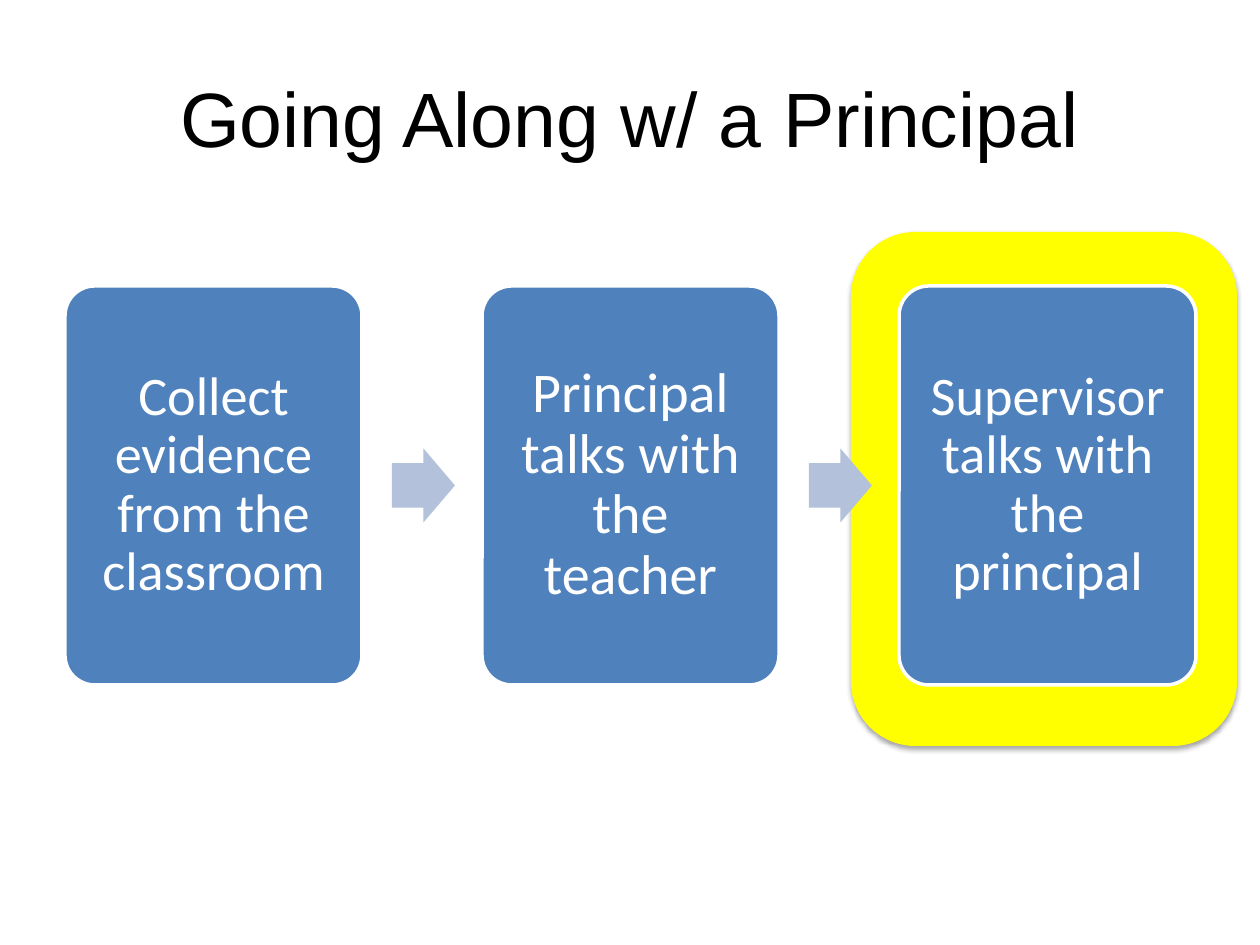
"""Build a slide showing a three-step process with its last step highlighted."""
from dataclasses import dataclass

from lxml.etree import SubElement
from pptx import Presentation
from pptx.dml.color import RGBColor
from pptx.enum.shapes import MSO_SHAPE
from pptx.enum.text import MSO_ANCHOR, PP_ALIGN
from pptx.oxml.ns import qn
from pptx.util import Pt

TITLE = "Going Along w/ a Principal"
STEPS = [
    ("Collect evidence from the classroom", 31),
    ("Principal talks with the teacher", 32),
    ("Supervisor talks with the principal", 31),
]

PX = 914400 / 126
SLIDE_SIZE = (1260, 945)
TITLE_BOX = (63, 38, 1134, 158)
HIGHLIGHT_BOX = (851, 232, 386, 514)
CARD_LEFT, CARD_TOP, CARD_WIDTH, CARD_HEIGHT = 65, 286, 297, 399
CARD_PITCH = 417
CARD_MARGIN = 16
ARROW_GAP, ARROW_WIDTH, ARROW_HEIGHT = 30, 63, 74


@dataclass(frozen=True)
class Theme:
    title_font: str = "Arial"
    card_font: str = "Calibri"
    title_size: int = 44
    title_color: str = "000000"
    card_text: str = "FFFFFF"
    card_fill: str = "4F81BD"
    card_line: str = "FFFFFF"
    arrow_fill: str = "B3C1DB"
    highlight_fill: str = "FFFF00"
    shadow_color: str = "000000"


THEME = Theme()


def emu(*lengths):
    return [round(length * PX) for length in lengths]


def add_block(page, preset, place, fill, adjustments=()):
    block = page.shapes.add_shape(preset, *emu(*place))
    block.shadow.inherit = False
    block.fill.solid()
    block.fill.fore_color.rgb = RGBColor.from_string(fill)
    block.line.fill.background()
    for index, value in enumerate(adjustments):
        block.adjustments[index] = value
    return block


def write(box, text, font, size, color, margins):
    frame = box.text_frame
    frame.word_wrap = True
    frame.vertical_anchor = MSO_ANCHOR.MIDDLE
    frame.margin_left = frame.margin_right = frame.margin_top = frame.margin_bottom = margins
    para = frame.paragraphs[0]
    para.text = text
    para.alignment = PP_ALIGN.CENTER
    para.font.name = font
    para.font.size = Pt(size)
    para.font.color.rgb = RGBColor.from_string(color)
    return para


def add_shadow(block):
    effects = block._element.spPr.find(qn("a:effectLst"))
    shadow = SubElement(effects, qn("a:outerShdw"), blurRad=str(Pt(3.1)), dist=str(Pt(1.8)),
                        dir="5400000", rotWithShape="0")
    color = SubElement(shadow, qn("a:srgbClr"), val=THEME.shadow_color)
    SubElement(color, qn("a:alpha"), val="35000")


def add_card(page, left, text, size):
    place = (left, CARD_TOP, CARD_WIDTH, CARD_HEIGHT)
    card = add_block(page, MSO_SHAPE.ROUNDED_RECTANGLE, place, THEME.card_fill, [0.1])
    card.line.color.rgb = RGBColor.from_string(THEME.card_line)
    card.line.width = Pt(2)
    para = write(card, text, THEME.card_font, size, THEME.card_text, emu(CARD_MARGIN)[0])
    para.line_spacing = 0.9


def add_arrow(page, card_left):
    left = card_left + CARD_WIDTH + ARROW_GAP
    top = CARD_TOP + (CARD_HEIGHT - ARROW_HEIGHT) / 2
    place = (left, top, ARROW_WIDTH, ARROW_HEIGHT)
    add_block(page, MSO_SHAPE.RIGHT_ARROW, place, THEME.arrow_fill, [0.6, 0.5])


def main():
    deck = Presentation()
    deck.slide_width, deck.slide_height = emu(*SLIDE_SIZE)
    page = deck.slides.add_slide(deck.slide_layouts[6])

    highlight = add_block(page, MSO_SHAPE.ROUNDED_RECTANGLE, HIGHLIGHT_BOX, THEME.highlight_fill)
    add_shadow(highlight)

    title = page.shapes.add_textbox(*emu(*TITLE_BOX))
    write(title, TITLE, THEME.title_font, THEME.title_size, THEME.title_color, Pt(4))

    for index, (text, size) in enumerate(STEPS):
        left = CARD_LEFT + index * CARD_PITCH
        add_card(page, left, text, size)
        if index < len(STEPS) - 1:
            add_arrow(page, left)

    deck.save("out.pptx")


if __name__ == "__main__":
    main()
